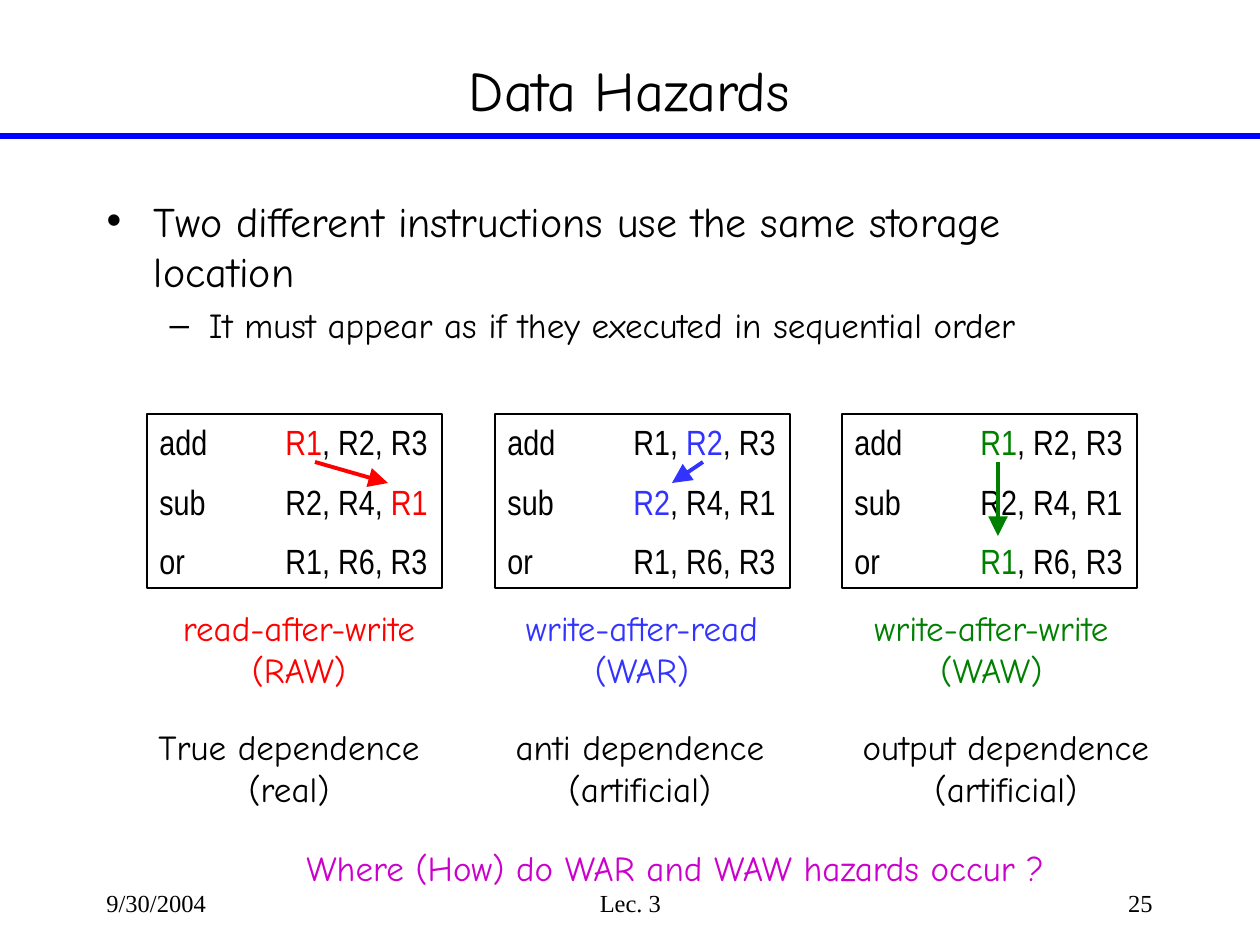
from lxml import etree
from pptx import Presentation
from pptx.dml.color import RGBColor
from pptx.enum.shapes import MSO_CONNECTOR, MSO_SHAPE
from pptx.enum.text import MSO_ANCHOR, MSO_AUTO_SIZE, PP_ALIGN
from pptx.oxml.ns import qn
from pptx.util import Pt

LEFT, CENTER, RIGHT = PP_ALIGN.LEFT, PP_ALIGN.CENTER, PP_ALIGN.RIGHT
TOP, MIDDLE = MSO_ANCHOR.TOP, MSO_ANCHOR.MIDDLE
STRAIGHT, RECTANGLE = MSO_CONNECTOR.STRAIGHT, MSO_SHAPE.RECTANGLE
NO_FIT = MSO_AUTO_SIZE.NONE

COLORS = {"black": "000000", "rule": "0000FF", "red": "FF0000",
          "blue": "3333FF", "green": "008000", "magenta": "CC00CC"}
HAND, CODE, SERIF = "Comic Neue", "Arial Narrow", "Times New Roman"
OPERAND_TAB = 126

TITLE = "Data Hazards"
BULLETS = [
    (0, 24, "Two different instructions use the same storage location"),
    (1, 20, "It must appear as if they executed in sequential order"),
]
HAZARDS = [
    {"color": "red", "left": 147, "arrow": (315, 462, 388, 483),
     "code": ["add\t*R1*, R2, R3", "sub\tR2, R4, *R1*", "or\tR1, R6, R3"],
     "name": (147, 304, ["read-after-write", "(RAW)"]),
     "kind": (136, 306, ["True dependence", "(real)"])},
    {"color": "blue", "left": 495, "arrow": (703, 462, 672, 483),
     "code": ["add\tR1, *R2*, R3", "sub\t*R2*, R4, R1", "or\tR1, R6, R3"],
     "name": (490, 304, ["write-after-read", "(WAR)"]),
     "kind": (495, 290, ["anti dependence", "(artificial)"])},
    {"color": "green", "left": 842, "arrow": (998, 462, 998, 536),
     "code": ["add\t*R1*, R2, R3", "sub\tR2, R4, R1", "or\t*R1*, R6, R3"],
     "name": (834, 315, ["write-after-write", "(WAW)"]),
     "kind": (839, 334, ["output dependence", "(artificial)"])},
]
QUESTION = "Where (How) do WAR and WAW hazards occur ?"
FOOTER = [(94, 262, LEFT, "9/30/2004"), (431, 399, CENTER, "Lec. 3"),
          (903, 262, RIGHT, "25")]


def px(n):
    return round(n * 914400 / 126)


def rgb(name):
    return RGBColor.from_string(COLORS[name])


def add_run(p, text, font, size, color="black"):
    r = p.add_run()
    r.text = text
    for key, value in {"name": font, "size": Pt(size), "bold": False}.items():
        setattr(r.font, key, value)
    r.font.color.rgb = rgb(color)


def paragraphs(tf, lines):
    for i, line in enumerate(lines):
        yield (tf.add_paragraph() if i else tf.paragraphs[0]), line


def add_text(s, box, lines, font, size, color="black", align=LEFT, wrap=False):
    tf = s.shapes.add_textbox(*map(px, box)).text_frame
    tf.word_wrap = wrap
    for p, line in paragraphs(tf, lines):
        p.alignment = align
        add_run(p, line, font, size, color)


def add_line(s, ends, color, width, arrow=False):
    line = s.shapes.add_connector(STRAIGHT, *map(px, ends))
    line.line.color.rgb = rgb(color)
    line.line.width = Pt(width)
    if arrow:
        etree.SubElement(line.line._get_or_add_ln(), qn("a:tailEnd"),
                         type="triangle", w="lg", len="lg")
    etree.SubElement(line._element.spPr, qn("a:effectLst"))


def place(sp, box, anchor):
    for key, value in zip(("left", "top", "width", "height"), box):
        setattr(sp, key, px(value))
    tf = sp.text_frame
    for key, value in {"auto_size": NO_FIT, "word_wrap": True,
                       "vertical_anchor": anchor}.items():
        setattr(tf, key, value)
    return tf


def add_code(s, left, lines, color):
    sp = s.shapes.add_shape(RECTANGLE, *map(px, (left, 414, 295, 174)))
    sp.shadow.inherit = False
    sp.fill.background()
    sp.line.color.rgb = rgb("black")
    sp.line.width = Pt(0.75)
    tf = sp.text_frame
    tf.word_wrap = False
    for i, (p, line) in enumerate(paragraphs(tf, lines)):
        p.alignment = LEFT
        p.space_before = Pt(10 if i else 0)
        tabs = etree.SubElement(p._p.get_or_add_pPr(), qn("a:tabLst"))
        etree.SubElement(tabs, qn("a:tab"), pos=str(px(OPERAND_TAB)), algn="l")
        for j, part in enumerate(line.split("*")):
            if part:
                add_run(p, part, CODE, 20, color if j % 2 else "black")


def main():
    prs = Presentation()
    prs.slide_width, prs.slide_height = px(1260), px(945)
    s = prs.slides.add_slide(prs.slide_layouts[1])

    add_line(s, (0, 136, 1260, 136), "rule", 3)
    for left, width, align, text in FOOTER:
        add_text(s, (left, 882, width, 63), [text], SERIF, 14, align=align, wrap=True)

    tf = place(s.shapes.title, (94, 21, 1071, 136), MIDDLE)
    tf.paragraphs[0].alignment = CENTER
    add_run(tf.paragraphs[0], TITLE, HAND, 32)

    tf = place(s.placeholders[1], (94, 189, 1071, 179), TOP)
    for p, (level, size, text) in paragraphs(tf, BULLETS):
        p.level = level
        add_run(p, text, HAND, size)

    for hazard in HAZARDS:
        color = hazard["color"]
        add_code(s, hazard["left"], hazard["code"], color)
        add_line(s, hazard["arrow"], color, 2.25, arrow=True)
        for key, top, ink in (("name", 600, color), ("kind", 719, "black")):
            left, width, lines = hazard[key]
            add_text(s, (left, top, width, 97), lines, HAND, 20, ink, CENTER)

    add_text(s, (294, 840, 832, 54), [QUESTION], HAND, 20, "magenta")
    prs.save("out.pptx")


if __name__ == "__main__":
    main()
